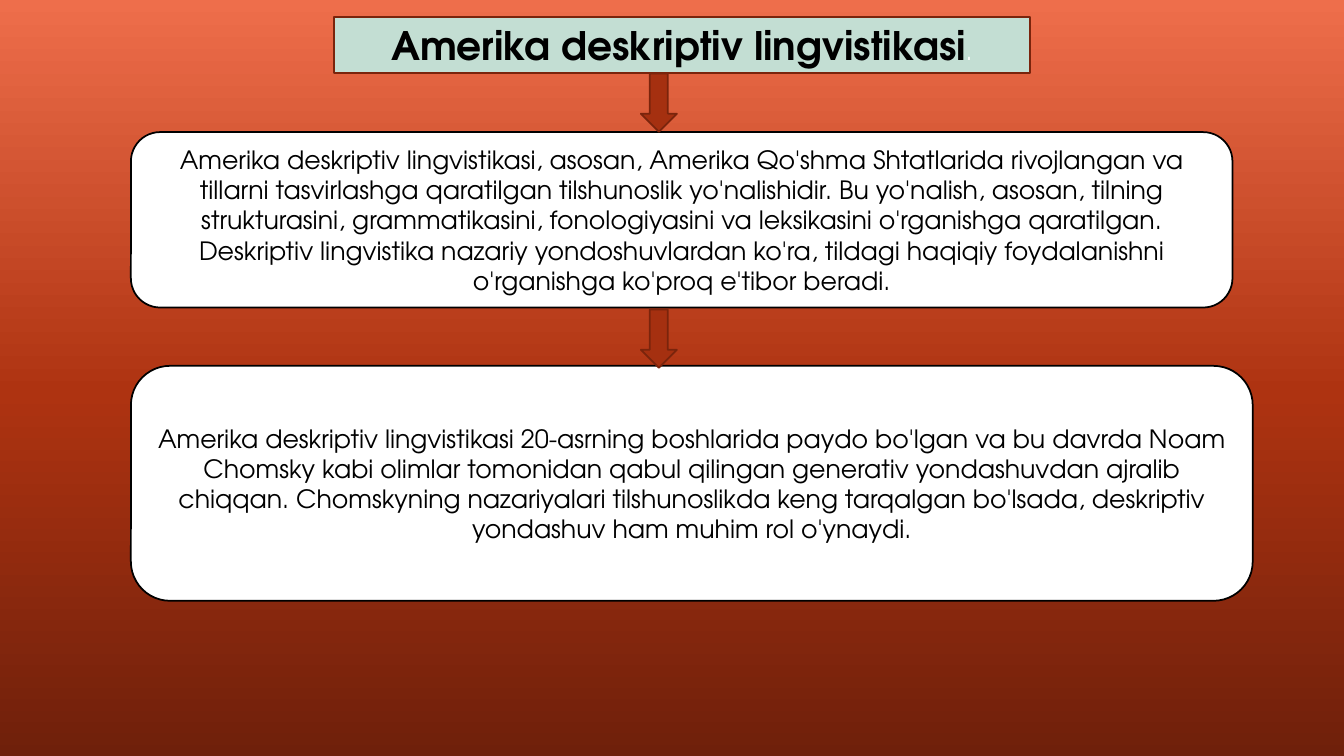
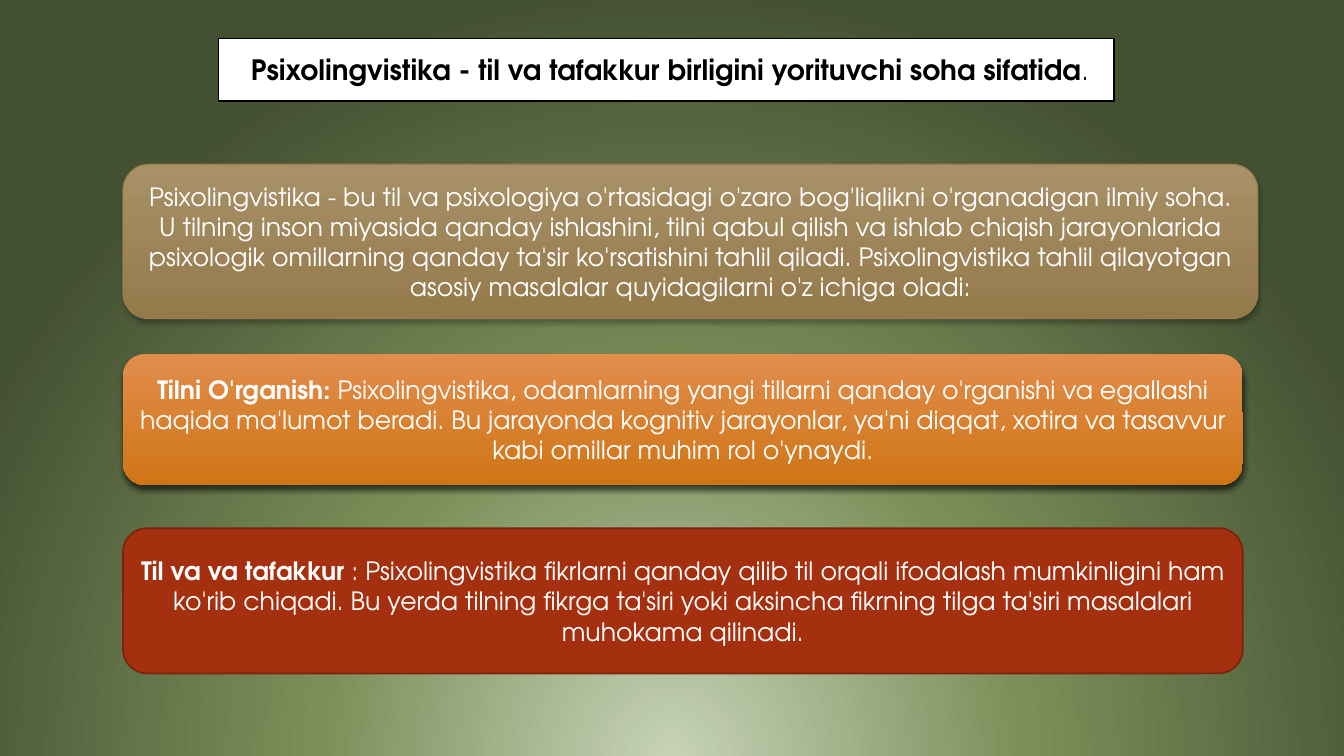
import pptx
import pptx.util
import pptx.dml.color
import pptx.enum.shapes
import pptx.enum.text
import pptx.oxml
import pptx.oxml.ns

Cm, Pt = pptx.util.Cm, pptx.util.Pt
SHAPES = pptx.enum.shapes.MSO_SHAPE
FONT = "TeX Gyre Adventor"
NAMESPACE = pptx.oxml.ns.nsdecls("a")
COLORS = {
    "black": "000000", "white": "FFFFFF", "mint": "C3DED3",
    "rust": "A53010", "rust edge": "7A240C",
    "maroon": "6F200B", "brick": "AE3311", "coral": "EE6E4B",
    "pale green": "C7D2B7", "moss": "7A8F59", "dark green": "445032",
    "sand": "A89068", "tan": "947A4B", "tan edge": "987D4D",
    "apricot": "E18D4C", "amber": "CF7516",
}

# Looks: fill is a colour or gradient stops; line is colour and width;
# shadow is opacity in percent, then blur and distance in points
STYLES = {
    "mint": {"fill": "mint", "line": ("rust edge", 1.25), "text": "black"},
    "white": {"fill": "white", "line": ("black", 1.25), "text": "black"},
    "rust": {"fill": "rust", "line": ("rust edge", 1.25), "text": "white"},
    "tan": {"fill": [(0, "sand"), (100, "tan")], "line": ("tan edge", 0.75),
            "text": "white", "shadow": (25, 3, 2)},
    "orange": {"fill": [(0, "apricot"), (100, "amber")], "line": None,
               "text": "white", "shadow": (60, 4, 3)},
}
UPWARD = '<a:lin ang="16200000" scaled="0"/>'
DOWNWARD = '<a:lin ang="5400000" scaled="0"/>'
GLOW = ('<a:path path="circle">'
        '<a:fillToRect l="50000" t="130000" r="50000" b="-30000"/></a:path>')

# Content: places are left, top, width, height in cm;
# each run is its text, then the format that differs from the body text
ARROW_LEFT, ARROW_WIDTH, ARROW_HEIGHT = 16.15, 0.91, 1.47
SLIDES = [
    {
        "background": ([(0, "maroon"), (48, "brick"), (100, "coral")], UPWARD),
        "title": ("mint", (8.41, 0.43, 17.55, 1.42), [
            ("Amerika deskriptiv lingvistikasi", {"size": Pt(28), "bold": True}),
            (".", {"color": "white"}),
        ]),
        "cards": [
            ("white", (3.3, 3.33, 27.76, 4.42), [
                ("Amerika deskriptiv lingvistikasi, asosan, Amerika Qo'shma "
                 "Shtatlarida rivojlangan va tillarni tasvirlashga qaratilgan "
                 "tilshunoslik yo'nalishidir. Bu yo'nalish, asosan, tilning "
                 "strukturasini, grammatikasini, fonologiyasini va leksikasini "
                 "o'rganishga qaratilgan. Deskriptiv lingvistika nazariy "
                 "yondoshuvlardan ko'ra, tildagi haqiqiy foydalanishni "
                 "o'rganishga ko'proq e'tibor beradi.", {}),
            ]),
            ("white", (3.3, 9.22, 28.27, 5.92), [
                ("Amerika deskriptiv lingvistikasi 20-asrning boshlarida paydo "
                 "bo'lgan va bu davrda Noam Chomsky kabi olimlar tomonidan qabul "
                 "qilingan generativ yondashuvdan ajralib chiqqan. Chomskyning "
                 "nazariyalari tilshunoslikda keng tarqalgan bo'lsada, "
                 "deskriptiv yondashuv ham muhim rol o'ynaydi.", {}),
            ]),
        ],
        "arrow tops": [1.85, 7.8],
    },
    {
        "background": ([(0, "pale green"), (46, "moss"), (100, "dark green")], GLOW),
        "title": ("white", (5.51, 0.97, 22.56, 1.57), [
            (" ", {}),
            ("Psixolingvistika - til va tafakkur birligini yorituvchi soha "
             "sifatida", {"size": Pt(20), "bold": True}),
            (".", {}),
        ]),
        "cards": [
            ("tan", (3.1, 4.14, 28.6, 3.89), [
                ("Psixolingvistika - bu til va psixologiya o'rtasidagi o'zaro "
                 "bog'liqlikni o'rganadigan ilmiy soha. U tilning inson miyasida "
                 "qanday ishlashini, tilni qabul qilish va ishlab chiqish "
                 "jarayonlarida psixologik omillarning qanday ta'sir "
                 "ko'rsatishini tahlil qiladi. Psixolingvistika tahlil "
                 "qilayotgan asosiy masalalar quyidagilarni o'z ichiga oladi:", {}),
            ]),
            ("orange", (3.1, 8.92, 28.22, 3.3), [
                ("Tilni O'rganish: ", {"bold": True}),
                ("Psixolingvistika, odamlarning yangi tillarni qanday o'rganishi "
                 "va egallashi haqida ma'lumot beradi. Bu jarayonda kognitiv "
                 "jarayonlar, ya'ni diqqat, xotira va tasavvur kabi omillar "
                 "muhim rol o'ynaydi.", {}),
            ]),
            ("rust", (3.1, 13.31, 28.22, 3.66), [
                ("Til va va tafakkur ", {"bold": True}),
                (": Psixolingvistika fikrlarni qanday qilib til orqali ifodalash "
                 "mumkinligini ham ko'rib chiqadi. Bu yerda tilning fikrga "
                 "ta'siri yoki aksincha fikrning tilga ta'siri masalalari "
                 "muhokama qilinadi.", {}),
            ]),
        ],
        "arrow tops": [],
    },
]


def rgb(name):
    return pptx.dml.color.RGBColor.from_string(COLORS[name])


def fill_gradient(fill, holder, stops, direction):
    """Put a gradient in place of the fill kept in the holder element."""
    fill.background()
    stop_xml = "".join(
        f'<a:gs pos="{position * 1000}"><a:srgbClr val="{COLORS[name]}"/></a:gs>'
        for position, name in stops)
    gradient = pptx.oxml.parse_xml(
        f'<a:gradFill {NAMESPACE} rotWithShape="1"><a:gsLst>{stop_xml}</a:gsLst>'
        f'{direction}</a:gradFill>')
    holder.replace(holder.find(pptx.oxml.ns.qn("a:noFill")), gradient)


def add_shadow(shape, opacity, blur, distance):
    effects = shape.element.spPr.find(pptx.oxml.ns.qn("a:effectLst"))
    effects.append(pptx.oxml.parse_xml(
        f'<a:outerShdw {NAMESPACE} blurRad="{Pt(blur)}" dist="{Pt(distance)}" '
        f'dir="5400000" algn="ctr" rotWithShape="0"><a:srgbClr '
        f'val="{COLORS["black"]}"><a:alpha val="{opacity * 1000}"/></a:srgbClr>'
        f'</a:outerShdw>'))


def write_text(shape, runs, color):
    frame = shape.text_frame
    frame.word_wrap = True
    frame.vertical_anchor = pptx.enum.text.MSO_ANCHOR.MIDDLE
    para = frame.paragraphs[0]
    para.alignment = pptx.enum.text.PP_ALIGN.CENTER
    for text, changes in runs:
        span = para.add_run()
        span.text = text
        look = {"name": FONT, "size": Pt(18), "bold": False, "color": color} | changes
        span.font.color.rgb = rgb(look.pop("color"))
        for attribute, value in look.items():
            setattr(span.font, attribute, value)


def add_box(page, kind, style_name, place, runs=()):
    style = STYLES[style_name]
    box = page.shapes.add_shape(kind, *map(Cm, place))
    box.shadow.inherit = False
    if isinstance(style["fill"], list):
        fill_gradient(box.fill, box.element.spPr, style["fill"], DOWNWARD)
    else:
        box.fill.solid()
        box.fill.fore_color.rgb = rgb(style["fill"])
    if style["line"]:
        color, width = style["line"]
        box.line.color.rgb = rgb(color)
        box.line.width = Pt(width)
    else:
        box.line.fill.background()
    if "shadow" in style:
        add_shadow(box, *style["shadow"])
    if runs:
        write_text(box, runs, style["text"])


def add_page(deck, content):
    page = deck.slides.add_slide(deck.slide_layouts[6])
    # Background
    fill = page.background.fill
    fill.background()
    holder = page.element.find(".//" + pptx.oxml.ns.qn("p:bgPr"))
    fill_gradient(fill, holder, *content["background"])
    # Title, cards and the arrows between them
    style, place, runs = content["title"]
    add_box(page, SHAPES.RECTANGLE, style, place, runs)
    for style, place, runs in content["cards"]:
        add_box(page, SHAPES.ROUNDED_RECTANGLE, style, place, runs)
    for top in content["arrow tops"]:
        add_box(page, SHAPES.DOWN_ARROW, "rust",
                (ARROW_LEFT, top, ARROW_WIDTH, ARROW_HEIGHT))


def main():
    deck = pptx.Presentation()
    deck.slide_width, deck.slide_height = Cm(33.87), Cm(19.05)
    for content in SLIDES:
        add_page(deck, content)
    deck.save("out.pptx")


if __name__ == "__main__":
    main()
